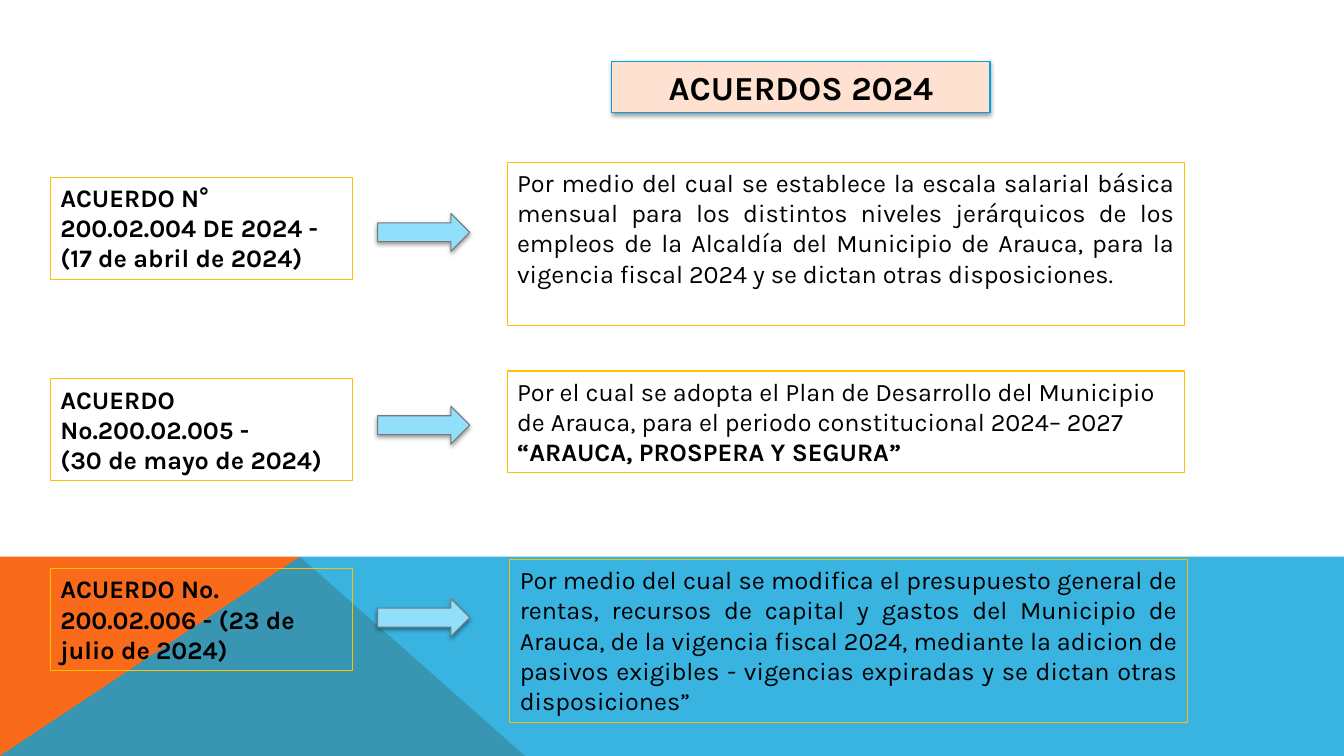
"""Build the slide that lists the 2024 agreements."""
from lxml.etree import SubElement as Sub
from pptx import Presentation
from pptx.dml.color import RGBColor as Rgb
from pptx.enum.shapes import MSO_SHAPE as Kind
from pptx.enum.text import MSO_ANCHOR as Anchor, MSO_AUTO_SIZE as Auto, PP_ALIGN as Align
from pptx.oxml.ns import qn
from pptx.util import Cm, Pt

WIDE, HIGH = 33.87, 19.05
FLOOR = 14.03
ROWS = [
    (4.47, 5.38, 12.78, 4.09, 4.11, Align.JUSTIFY,
     ["ACUERDO N° 200.02.004 DE 2024 - (17 de abril de 2024)"],
     [("Por medio del cual se establece la escala salarial básica mensual para los "
       "distintos niveles jerárquicos de los empleos de la Alcaldía del Municipio de "
       "Arauca, para la vigencia fiscal 2024 y se dictan otras disposiciones.", False)]),
    (9.55, 10.24, 12.78, 9.35, 2.57, Align.LEFT,
     ["ACUERDO No.200.02.005 -", "(30 de mayo de 2024)"],
     [("Por el cual se adopta el Plan de Desarrollo del Municipio de Arauca, para el "
       "periodo constitucional 2024– 2027 ", False),
      ("“ARAUCA, PROSPERA Y SEGURA”", True)]),
    (14.33, 15.09, 12.85, 14.1, 4.11, Align.JUSTIFY,
     ["ACUERDO No. 200.02.006 - (23 de julio de 2024)"],
     [("Por medio del cual se modifica el presupuesto general de rentas, recursos de "
       "capital y gastos del Municipio de Arauca, de la vigencia fiscal 2024, mediante "
       "la adicion de pasivos exigibles - vigencias expiradas y se dictan otras "
       "disposiciones”", False)]),
]


def paint(shape, fill=None, line=None, alpha=None):
    """Set the fill, its opacity in percent, and the outline of a shape."""
    if fill:
        shape.fill.solid()
        shape.fill.fore_color.rgb = Rgb.from_string(fill)
    else:
        shape.fill.background()
    if alpha:
        tint = shape.fill._xPr.find(".//" + qn("a:srgbClr"))
        Sub(tint, qn("a:alpha"), val=str(alpha * 1000))
    if line:
        shape.line.color.rgb = Rgb.from_string(line)
        shape.line.width = Pt(0.75)
    else:
        shape.line.fill.background()


def shade(shape):
    """Give a shape a soft shadow that falls straight down."""
    shape.shadow.inherit = False
    list_ = shape._element.spPr.find(qn("a:effectLst"))
    cast = Sub(list_, qn("a:outerShdw"), blurRad=str(Pt(3.1)), dist=str(Pt(1.6)),
               dir="5400000", algn="ctr", rotWithShape="0")
    tint = Sub(cast, qn("a:srgbClr"), val="000000")
    Sub(tint, qn("a:alpha"), val="38000")


def write(shape, paras, size=18, align=Align.LEFT, anchor=Anchor.TOP):
    """Fill a shape with paragraphs, each a list of text and bold pairs."""
    frame = shape.text_frame
    frame.word_wrap = True
    frame.auto_size = Auto.NONE
    frame.vertical_anchor = anchor
    for num, runs in enumerate(paras):
        para = frame.add_paragraph() if num else frame.paragraphs[0]
        para.alignment = align
        for text, bold in runs:
            run = para.add_run()
            run.text = text
            font = run.font
            font.name, font.size, font.bold = "Karla", Pt(size), bold
            font.color.rgb = Rgb.from_string("000000")


def place(slide, kind, left, top, width, height):
    """Add a preset shape without a shadow."""
    shape = slide.shapes.add_shape(kind, Cm(left), Cm(top), Cm(width), Cm(height))
    shape.shadow.inherit = False
    return shape


def frame_text(slide, spot, paras, align=Align.LEFT):
    """Add a gold outlined box with text."""
    box = place(slide, Kind.RECTANGLE, *spot)
    paint(box, line="FFC000")
    write(box, paras, align=align)


def point(slide, top):
    """Add an arrow from an agreement to its subject."""
    arrow = place(slide, Kind.RIGHT_ARROW, 9.52, top, 2.32, 0.95)
    paint(arrow, "91DFFB", "76787B")
    shade(arrow)


def band(slide, spots, fill, alpha=None):
    """Add a filled outline along the foot of the slide."""
    first, *rest = [(Cm(x), Cm(y)) for x, y in spots]
    pen = slide.shapes.build_freeform(*first)
    pen.add_line_segments(rest)
    shape = pen.convert_to_shape()
    shape.shadow.inherit = False
    paint(shape, fill, alpha=alpha)


def head(slide, text):
    """Move, paint and fill the title."""
    title = slide.shapes.title
    title.left, title.top, title.width, title.height = map(Cm, (15.42, 1.55, 9.53, 1.28))
    paint(title, "FEE1D1", "03A0D9")
    shade(title)
    write(title, [[(text, True)]], size=24, align=Align.CENTER, anchor=Anchor.MIDDLE)


def main():
    """Build and save the slide."""
    deck = Presentation()
    deck.slide_width, deck.slide_height = Cm(WIDE), Cm(HIGH)
    slide = deck.slides.add_slide(deck.slide_layouts[5])
    band(slide, [(0, HIGH), (0, FLOOR), (7.56, FLOOR), (13.23, HIGH)], "F96A1B")
    band(slide, [(0, HIGH), (7.56, FLOOR), (WIDE, FLOOR), (WIDE, HIGH)], "08A1D9", 80)
    for top, mid, left, start, height, align, name, theme in ROWS:
        frame_text(slide, (1.27, top, 7.62, 2.57), [[(text, True)] for text in name])
        point(slide, mid)
        frame_text(slide, (left, start, 17.07, height), [theme], align)
    head(slide, "ACUERDOS 2024")
    deck.save("out.pptx")


if __name__ == "__main__":
    main()
